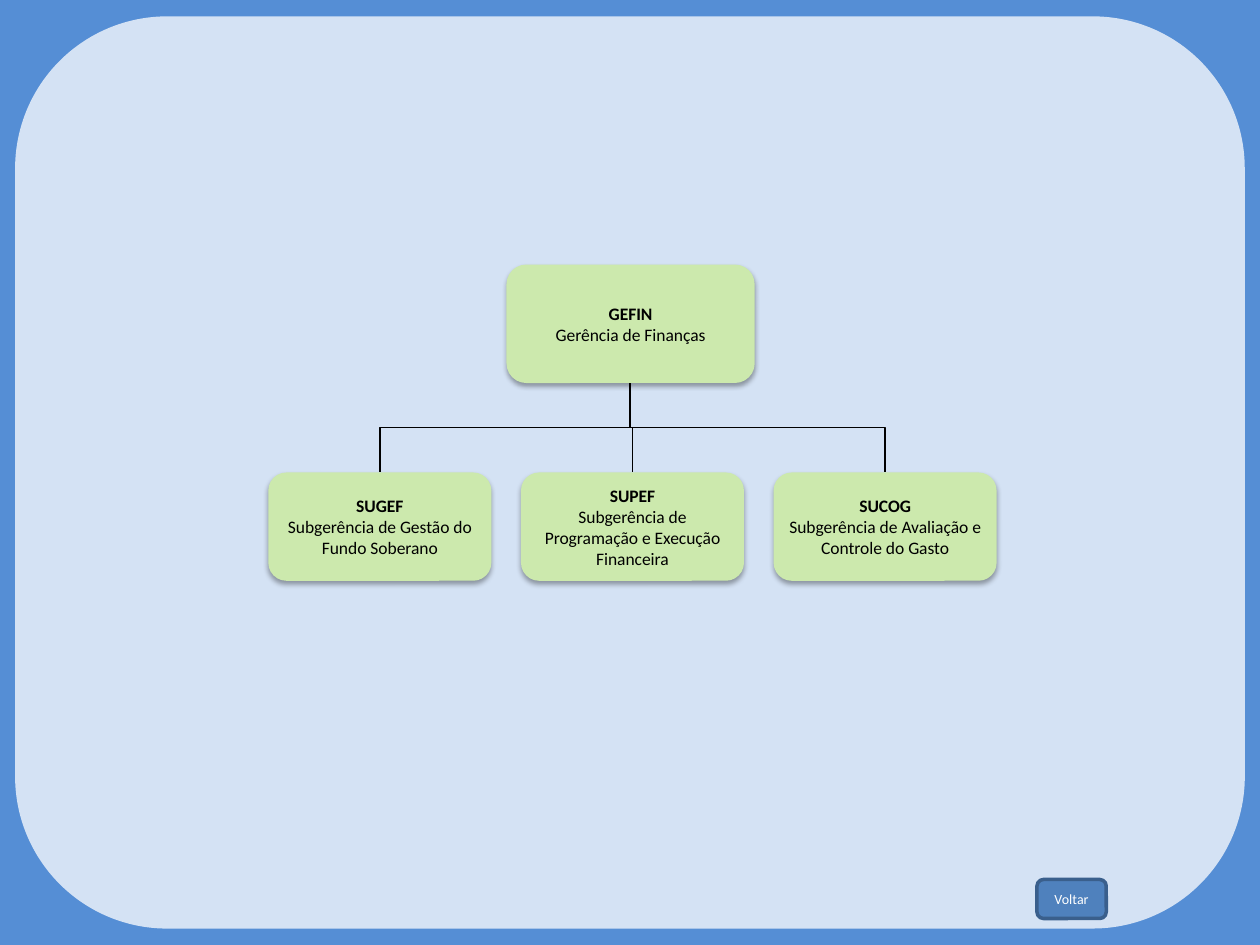
from lxml import etree
from pptx import Presentation
from pptx.dml.color import RGBColor
from pptx.enum.shapes import MSO_CONNECTOR, MSO_SHAPE
from pptx.enum.text import MSO_ANCHOR, PP_ALIGN
from pptx.oxml.ns import qn
from pptx.util import Inches, Pt

ROUND = MSO_SHAPE.ROUNDED_RECTANGLE
ELBOW = MSO_CONNECTOR.ELBOW
MIDDLE = MSO_ANCHOR.MIDDLE
CENTER = PP_ALIGN.CENTER

HUES = {"back": "558ED5", "panel": "D4E2F4", "unit": "CCE9AD", "ink": "000000",
        "key": "4F81BD", "edge": "3A5F8C", "white": "FFFFFF"}
COLOR = {name: RGBColor.from_string(code) for name, code in HUES.items()}

deck = Presentation()
deck.slide_width, deck.slide_height = Inches(10), Inches(7.5)
slide = deck.slides.add_slide(deck.slide_layouts[6])
slide.background.fill.solid()
slide.background.fill.fore_color.rgb = COLOR["back"]


def add_box(left, top, width, height, fill, lines=(), size=10, ink="ink", inset=None):
    """Add a rounded box; each line of text is a (words, bold) pair."""
    box = slide.shapes.add_shape(ROUND, *map(Inches, (left, top, width, height)))
    box.shadow.inherit = False
    box.fill.solid()
    box.fill.fore_color.rgb = COLOR[fill]
    box.line.fill.background()
    frame = box.text_frame
    frame.word_wrap = True
    frame.vertical_anchor = MIDDLE
    if inset is not None:
        frame.margin_left = frame.margin_right = Inches(inset)
        frame.margin_top = frame.margin_bottom = Inches(inset)
    for i, (words, bold) in enumerate(lines):
        para = frame.add_paragraph() if i else frame.paragraphs[0]
        para.alignment = CENTER
        run = para.add_run()
        run.text = words
        run.font.name = "Calibri"
        run.font.size = Pt(size)
        run.font.bold = bold
        run.font.color.rgb = COLOR[ink]
    return box


def add_unit(left, top, width, height, code, name, inset=None):
    """Add a box of the chart with its soft shadow below."""
    box = add_box(left, top, width, height, "unit", [(code, True), (name, False)],
                  inset=inset)
    effects = box._element.spPr.find(qn("a:effectLst"))
    shade = etree.SubElement(effects, qn("a:outerShdw"), blurRad=str(Pt(3.1)),
                             dist=str(Pt(1.8)), dir="5400000", rotWithShape="0")
    tint = etree.SubElement(shade, qn("a:srgbClr"), val=HUES["ink"])
    etree.SubElement(tint, qn("a:alpha"), val="35000")


# Panel and head of the chart
add_box(0.12, 0.13, 9.76, 7.24, "panel")
add_unit(4.02, 2.1, 1.97, 0.94, "GEFIN", "Gerência de Finanças")

# Row of units, each joined to the head
mid, base, row = 5, 3.04, 3.75
first, pitch, wide, high = 2.13, 2.005, 1.77, 0.86
drop = row - base
units = [("SUGEF", "Subgerência de Gestão do Fundo Soberano"),
         ("SUPEF", "Subgerência de Programação e Execução Financeira"),
         ("SUCOG", "Subgerência de Avaliação e Controle do Gasto")]
for col, (code, name) in enumerate(units):
    left = first + col * pitch
    add_unit(left, row, wide, high, code, name, inset=0.04)

    # An elbow that leaves downwards is a level one, turned about its centre
    shift = left + wide / 2 - mid
    span = abs(shift)
    start = mid + shift / 2 - drop / 2
    end = start + drop
    top = (base + row - span) / 2
    if shift > 0:
        start, end = end, start
    link = slide.shapes.add_connector(
        ELBOW, *map(Inches, (start, top, end, top + span)))
    link.line.color.rgb = COLOR["ink"]
    link.line.width = Pt(0.75)
    shape = link._element.spPr
    turn = 270 if shift > 0 else 90
    shape.find(qn("a:xfrm")).set("rot", str(turn * 60000))
    etree.SubElement(shape, qn("a:effectLst"))

# Back button
button = add_box(8.23, 6.98, 0.55, 0.31, "key", [("Voltar", False)], 8, "white", 0.04)
button.line.color.rgb = COLOR["edge"]
button.line.width = Pt(2)

deck.save("out.pptx")
